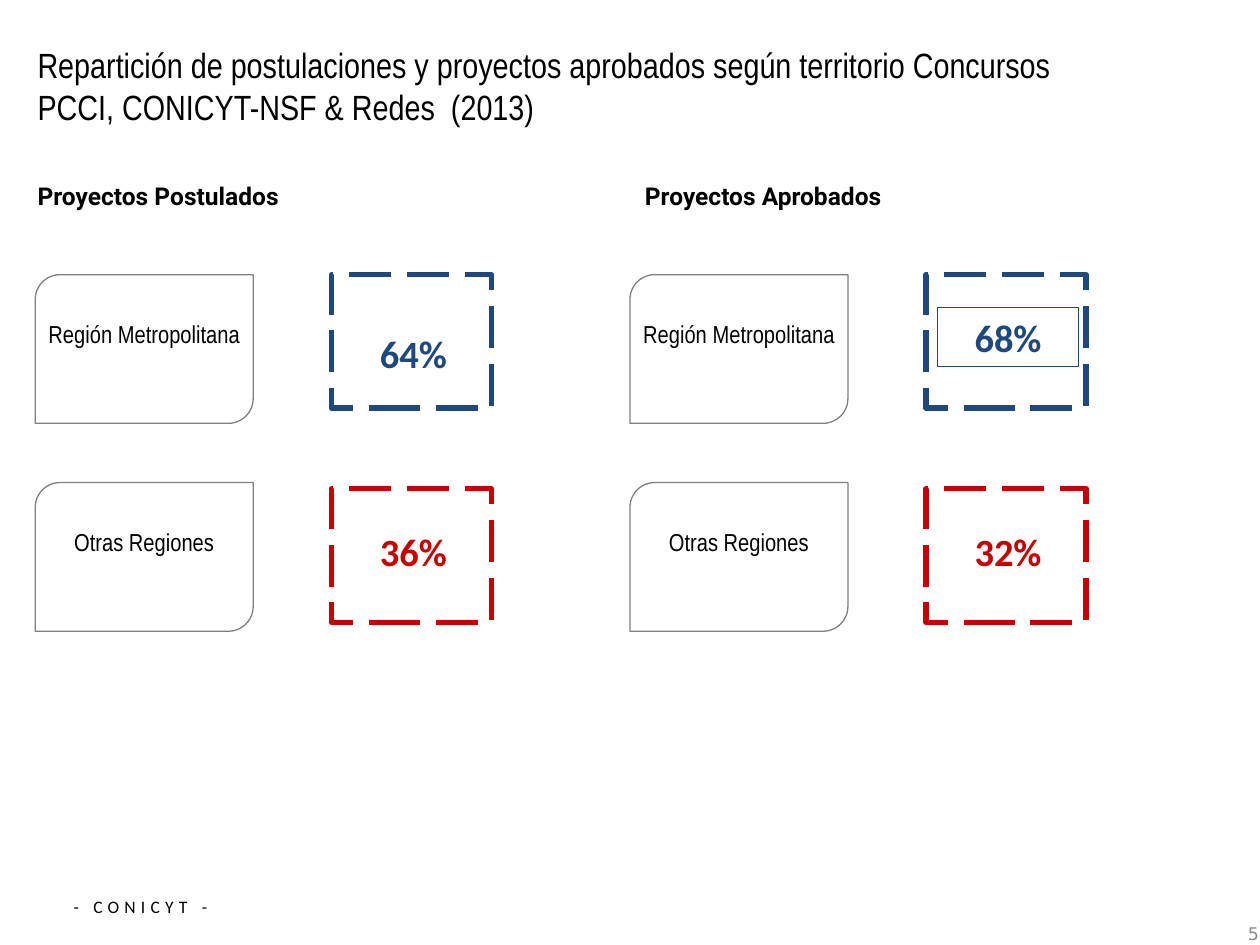
"""Build the slide that compares submitted and approved projects by territory."""
from dataclasses import dataclass

from pptx import Presentation
from pptx import util as u
from pptx.dml.color import RGBColor
from pptx.enum import dml, shapes, text

TITLE = ("Repartición de postulaciones y proyectos aprobados según territorio "
         "Concursos PCCI, CONICYT-NSF & Redes  (2013)")
FOOTER = "- CONICYT -"
PAGE = "5"
REGIONS = [("Región Metropolitana", "1F497D"), ("Otras Regiones", "CA0000")]
GROUPS = [
    {"heading": "Proyectos Postulados", "shares": ["64%", "36%"]},
    {"heading": "Proyectos Aprobados", "shares": ["68%", "32%"]},
]
SHARE_TOPS = [[2.57, 4.14], [2.44, 4.14]]
BOXED_SHARE = "68%"


@dataclass(frozen=True)
class Theme:
    ink: str = "000000"
    paper: str = "FFFFFF"
    outline: str = "808080"
    muted: str = "8C8C8C"
    narrow: str = "Arial Narrow"
    heading: str = "Roboto"
    number: str = "Calibri"
    page: str = "DejaVu Sans"
    title_size: int = 20
    body_size: int = 14
    share_size: int = 22
    small_size: int = 10
    thin: float = 0.75
    thick: float = 3


THEME = Theme()
LEFT, COLUMN_STEP = 0.28, 4.72
CARD_TOPS, CARD_SIZE = [2.18, 3.83], (1.73, 1.18)
FRAME_TOPS, FRAME_SIZE, FRAME_OFFSET = [2.18, 3.88], (1.27, 1.06), 2.35
SHARE_SIZE, SHARE_OFFSET = (1.12, 0.47), 2.44
LABEL_DROP, LABEL_HEIGHT = 0.3, 0.34
HEADING_LEFT, HEADING_STEP = 0.2, 4.82


def rgb(value):
    return RGBColor.from_string(value)


def inches(*lengths):
    return [u.Inches(length) for length in lengths]


def add_text(slide, box, words, font, size, color=THEME.ink, bold=False,
             align=text.PP_ALIGN.LEFT, anchor=text.MSO_ANCHOR.TOP):
    area = slide.shapes.add_textbox(*inches(*box))
    frame = area.text_frame
    frame.word_wrap = True
    frame.vertical_anchor = anchor
    paragraph = frame.paragraphs[0]
    paragraph.text = words
    paragraph.alignment = align
    paragraph.font.name = font
    paragraph.font.size = u.Pt(size)
    paragraph.font.bold = bold
    paragraph.font.color.rgb = rgb(color)
    return area


def add_outline(slide, kind, box, color, width, fill=None, dash=None):
    outline = slide.shapes.add_shape(kind, *inches(*box))
    outline.shadow.inherit = False
    if fill:
        outline.fill.solid()
        outline.fill.fore_color.rgb = rgb(fill)
    else:
        outline.fill.background()
    outline.line.color.rgb = rgb(color)
    outline.line.width = u.Pt(width)
    if dash:
        outline.line.dash_style = dash


def add_region(slide, left, row, label):
    top = CARD_TOPS[row]
    add_outline(slide, shapes.MSO_SHAPE.ROUND_2_DIAG_RECTANGLE,
                (left, top, *CARD_SIZE), THEME.outline, THEME.thin, THEME.paper)
    area = add_text(slide, (left, top + LABEL_DROP, CARD_SIZE[0], LABEL_HEIGHT),
                    label, THEME.narrow, THEME.body_size,
                    align=text.PP_ALIGN.CENTER)
    area.text_frame.margin_left = area.text_frame.margin_right = 0


def add_share(slide, left, row, top, share, color):
    add_outline(slide, shapes.MSO_SHAPE.RECTANGLE,
                (left + FRAME_OFFSET, FRAME_TOPS[row], *FRAME_SIZE),
                color, THEME.thick, dash=dml.MSO_LINE.LONG_DASH)
    area = add_text(slide, (left + SHARE_OFFSET, top, *SHARE_SIZE), share,
                    THEME.number, THEME.share_size, color, True,
                    text.PP_ALIGN.CENTER)
    if share == BOXED_SHARE:
        area.line.color.rgb = rgb(color)
        area.line.width = u.Pt(THEME.thin)


def main():
    deck = Presentation()
    deck.slide_width, deck.slide_height = inches(10, 7.5)
    slide = deck.slides.add_slide(deck.slide_layouts[6])

    footer = add_text(slide, (0.38, 7.06, 1.47, 0.33), FOOTER, THEME.number,
                      THEME.small_size, align=text.PP_ALIGN.CENTER)
    footer_run = footer.text_frame.paragraphs[0].runs[0]
    footer_run.font._element.set("spc", "300")
    title = add_text(slide, (0.2, 0.05, 8.83, 1.57), TITLE, THEME.narrow,
                     THEME.title_size, anchor=text.MSO_ANCHOR.MIDDLE)
    title.text_frame.margin_bottom = u.Inches(0.36)
    add_text(slide, (7.76, 7.21, 2.33, 0.4), PAGE, THEME.page, THEME.small_size,
             THEME.muted, align=text.PP_ALIGN.RIGHT,
             anchor=text.MSO_ANCHOR.MIDDLE)

    for column, group in enumerate(GROUPS):
        left = LEFT + column * COLUMN_STEP
        heading_left = HEADING_LEFT + column * HEADING_STEP
        add_text(slide, (heading_left, 1.39, 3.21, 0.56), group["heading"],
                 THEME.heading, THEME.body_size, bold=True)
        for row, (label, color) in enumerate(REGIONS):
            add_region(slide, left, row, label)
            add_share(slide, left, row, SHARE_TOPS[column][row],
                      group["shares"][row], color)

    deck.save("out.pptx")


if __name__ == "__main__":
    main()
